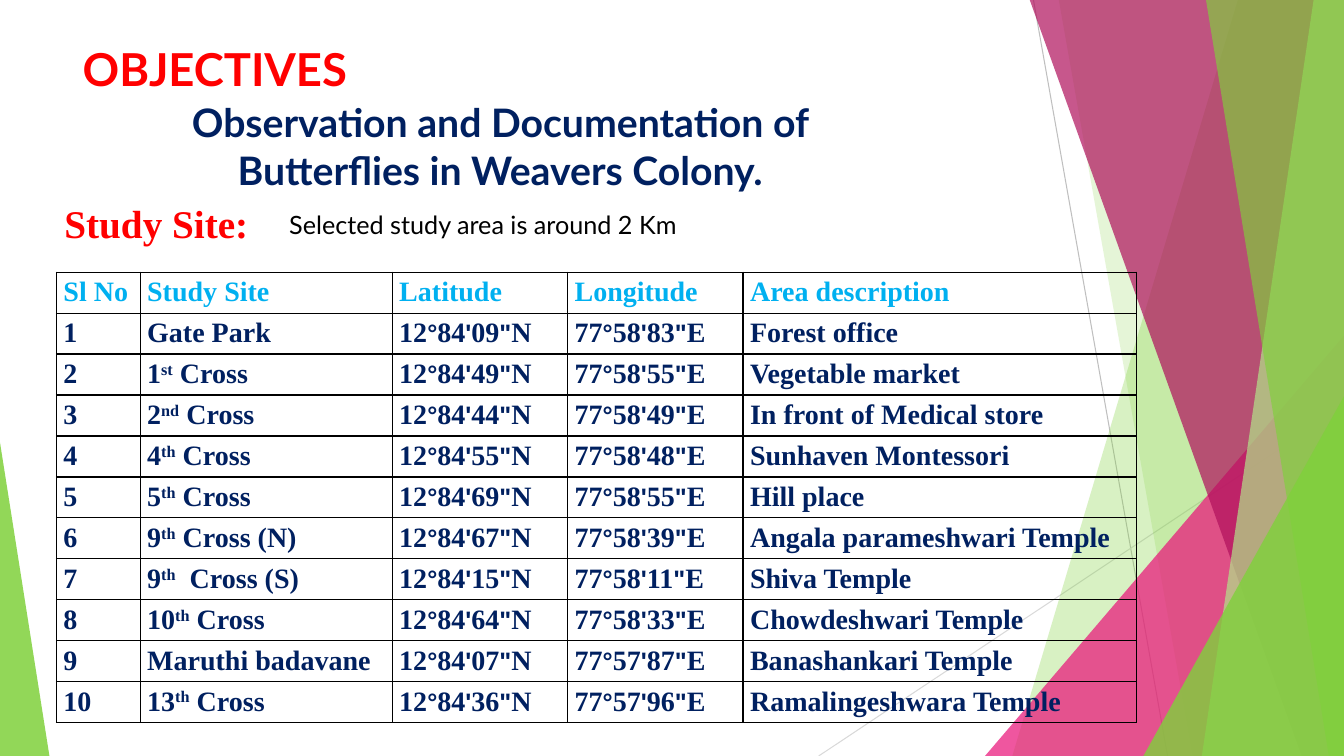
from itertools import groupby
from lxml.etree import SubElement
from pptx import Presentation
from pptx.dml.color import RGBColor
from pptx.enum.shapes import MSO_CONNECTOR, MSO_SHAPE
from pptx.enum.text import MSO_ANCHOR, MSO_AUTO_SIZE, PP_ALIGN
from pptx.oxml.ns import qn
from pptx.util import Inches, Pt

COLORS = {
    "green": "7FD13B", "pale": "B2E389", "pink": "EA157A", "plum": "B0105C",
    "gray": "BFBFBF", "light": "D9D9D9", "red": "FF0000", "navy": "002060",
    "sky": "00B0F0", "black": "000000",
}
SERIF = "Times New Roman"
WIDE, HIGH = 13.33, 7.5


def add_run(para, text, size, face, color, bold=True):
    run = para.add_run()
    run.text = text
    font = run.font
    font.size, font.name, font.bold = Pt(size), face, bold
    font.color.rgb = RGBColor.from_string(COLORS[color])
    return run


def paint(shape, color, alpha):
    shape.shadow.inherit = False
    shape.fill.solid()
    shape.fill.fore_color.rgb = RGBColor.from_string(COLORS[color])
    shape.line.fill.background()
    tint = shape.fill._xPr.find(qn("a:solidFill"))[0]
    SubElement(tint, qn("a:alpha")).set("val", str(alpha * 1000))


deck = Presentation()
deck.slide_width, deck.slide_height = Inches(WIDE), Inches(HIGH)
slide = deck.slides.add_slide(deck.slide_layouts[1])
shapes = slide.shapes

for x1, y1, x2, y2, color in [
    (10.25, 0, 11.58, HIGH, "gray"),
    (WIDE, 4.03, 8.12, HIGH, "light"),
]:
    line = shapes.add_connector(
        MSO_CONNECTOR.STRAIGHT, Inches(x1), Inches(y1), Inches(x2), Inches(y2))
    line.line.color.rgb = RGBColor.from_string(COLORS[color])
    line.line.width = Pt(0.75)
    SubElement(line._element.spPr, qn("a:effectLst"))

for kind, spot, color, alpha in [
    ("band", (12.28, 10.04), "green", 30),
    ("band", (10.5, 11.83), "green", 20),
    ("wedge", (9.77, 3.33, 3.56, 1), "pink", 72),
    ("band", (10.21, 12.91), "plum", 70),
    ("band", (13.03, 11.92), "pale", 70),
    ("band", (11.96, 13.18), "green", 65),
    ("wedge", (11.34, 3.93, 1.99, 1), "green", 80),
    ("wedge", (0, 4.39, 0.49, 0), "green", 85),
]:
    if kind == "band":
        head, foot = spot
        top = Inches(-0.01)
        pen = shapes.build_freeform(Inches(head), top)
        pen.add_line_segments([
            (Inches(WIDE), top), (Inches(WIDE), Inches(HIGH)),
            (Inches(foot), Inches(HIGH))], close=True)
        facet = pen.convert_to_shape()
    else:
        left, top, width, apex = spot
        facet = shapes.add_shape(
            MSO_SHAPE.ISOSCELES_TRIANGLE, Inches(left), Inches(top),
            Inches(width), Inches(HIGH - top))
        facet.adjustments[0] = apex
    paint(facet, color, alpha)

title, body = shapes.title, slide.placeholders[1]
for holder, spot, text, size, color, align in [
    (title, (0.72, 0.36, 11.5, 0.09), "OBJECTIVES", 32.4, "red", PP_ALIGN.LEFT),
    (body, (1.17, 0.93, 7.58, 1.06),
     "Observation and Documentation of Butterflies in Weavers Colony.",
     28, "navy", PP_ALIGN.CENTER),
]:
    holder.left, holder.top, holder.width, holder.height = map(Inches, spot)
    frame = holder.text_frame
    frame.word_wrap = True
    frame.auto_size = MSO_AUTO_SIZE.NONE
    frame.vertical_anchor = MSO_ANCHOR.TOP
    para = frame.paragraphs[0]
    para.alignment = align
    add_run(para, text, size, "Lato", color)

props = body.text_frame.paragraphs[0]._p.get_or_add_pPr()
props.set("marL", "0")
props.set("indent", "0")
SubElement(props, qn("a:buNone"))

ROWS = [
    ("Sl No", "Study Site", "Latitude", "Longitude", "Area description"),
    ("1", "Gate Park", "12°84'09\"N", "77°58'83\"E", "Forest office"),
    ("2", "1^st^ Cross", "12°84'49\"N", "77°58'55\"E", "Vegetable market"),
    ("3", "2^nd^ Cross", "12°84'44\"N", "77°58'49\"E", "In front of Medical store"),
    ("4", "4^th^ Cross", "12°84'55\"N", "77°58'48\"E", "Sunhaven Montessori"),
    ("5", "5^th^ Cross", "12°84'69\"N", "77°58'55\"E", "Hill place"),
    ("6", "9^th^ Cross (N)", "12°84'67\"N", "77°58'39\"E", "Angala parameshwari Temple"),
    ("7", "9^th^  Cross (S)", "12°84'15\"N", "77°58'11\"E", "Shiva Temple"),
    ("8", "10^th^ Cross", "12°84'64\"N", "77°58'33\"E", "Chowdeshwari Temple"),
    ("9", "Maruthi badavane", "12°84'07\"N", "77°57'87\"E", "Banashankari Temple"),
    ("10", "13^th^ Cross", "12°84'36\"N", "77°57'96\"E", "Ramalingeshwara Temple"),
]
WIDTHS = [0.83, 2.5, 1.74, 1.74, 3.9]
table = shapes.add_table(
    len(ROWS), len(WIDTHS), Inches(0.56), Inches(2.7),
    Inches(sum(WIDTHS)), Inches(4.47)).table
table.first_row = table.horz_banding = False
for col, width in zip(table.columns, WIDTHS):
    col.width = Inches(width)

for r, row in enumerate(ROWS):
    table.rows[r].height = Inches(4.47 / len(ROWS))
    for c, text in enumerate(row):
        cell = table.cell(r, c)
        cell.margin_left = cell.margin_right = Inches(0.07)
        cell.margin_top = cell.margin_bottom = 0
        para = cell.text_frame.paragraphs[0]
        para.line_spacing = 1.15
        for n, part in enumerate(text.split("^")):
            for mark, chars in groupby(part, lambda char: char in "°'\""):
                size, face = (18, "Arial") if mark else (20, SERIF)
                run = add_run(para, "".join(chars), size, face, "navy" if r else "sky")
                if n % 2:
                    run.font._element.set("baseline", "30000")
        props = cell._tc.get_or_add_tcPr()
        for side in ("lnL", "lnR", "lnT", "lnB"):
            edge = SubElement(props, qn("a:" + side), w=str(Pt(1)))
            fill = SubElement(edge, qn("a:solidFill"))
            SubElement(fill, qn("a:srgbClr"), val=COLORS["black"])
        cell.fill.background()

for spot, text, size, face, color, bold in [
    ((0.54, 1.93, 2.05, 0.57), "Study Site:", 28, SERIF, "red", True),
    ((2.77, 2.03, 4.26, 0.4), "Selected study area is around 2 Km", 18, "Lato", "black", False),
]:
    frame = shapes.add_textbox(*map(Inches, spot)).text_frame
    frame.word_wrap = False
    frame.auto_size = MSO_AUTO_SIZE.SHAPE_TO_FIT_TEXT
    add_run(frame.paragraphs[0], text, size, face, color, bold)

deck.save("out.pptx")
